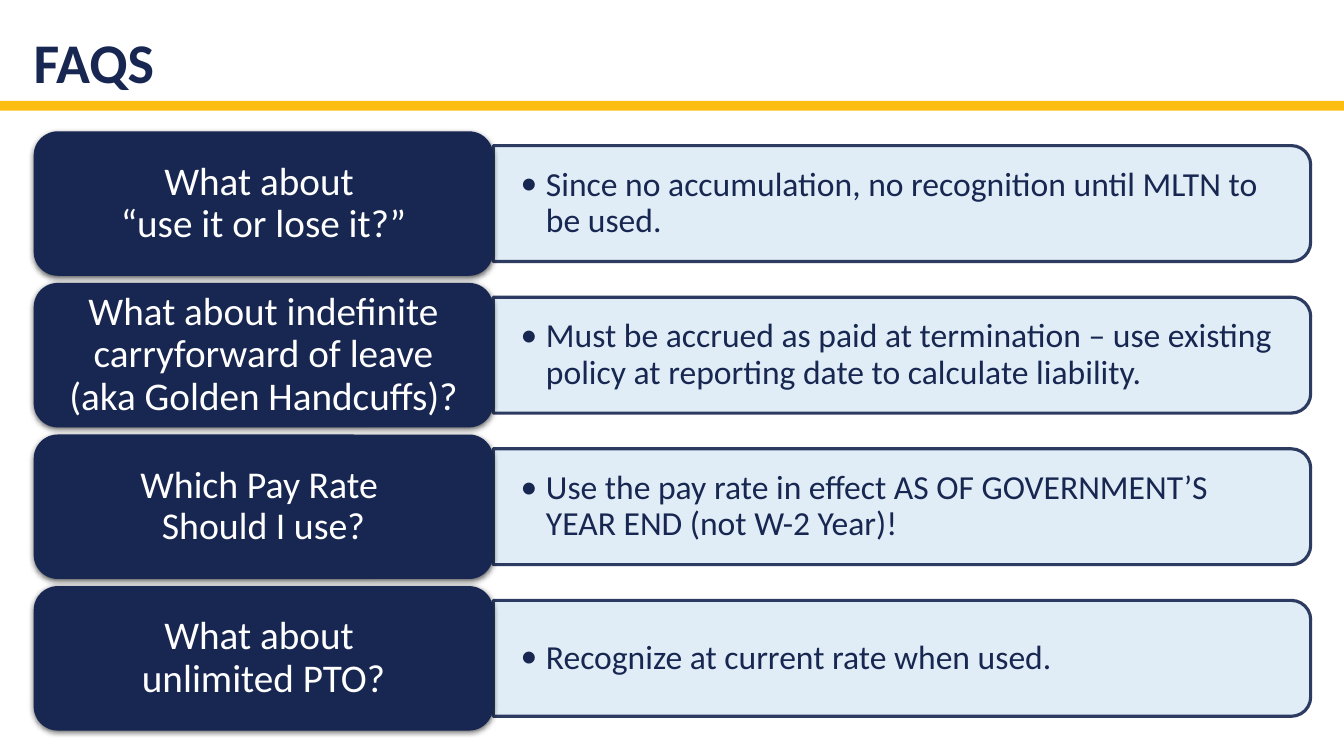
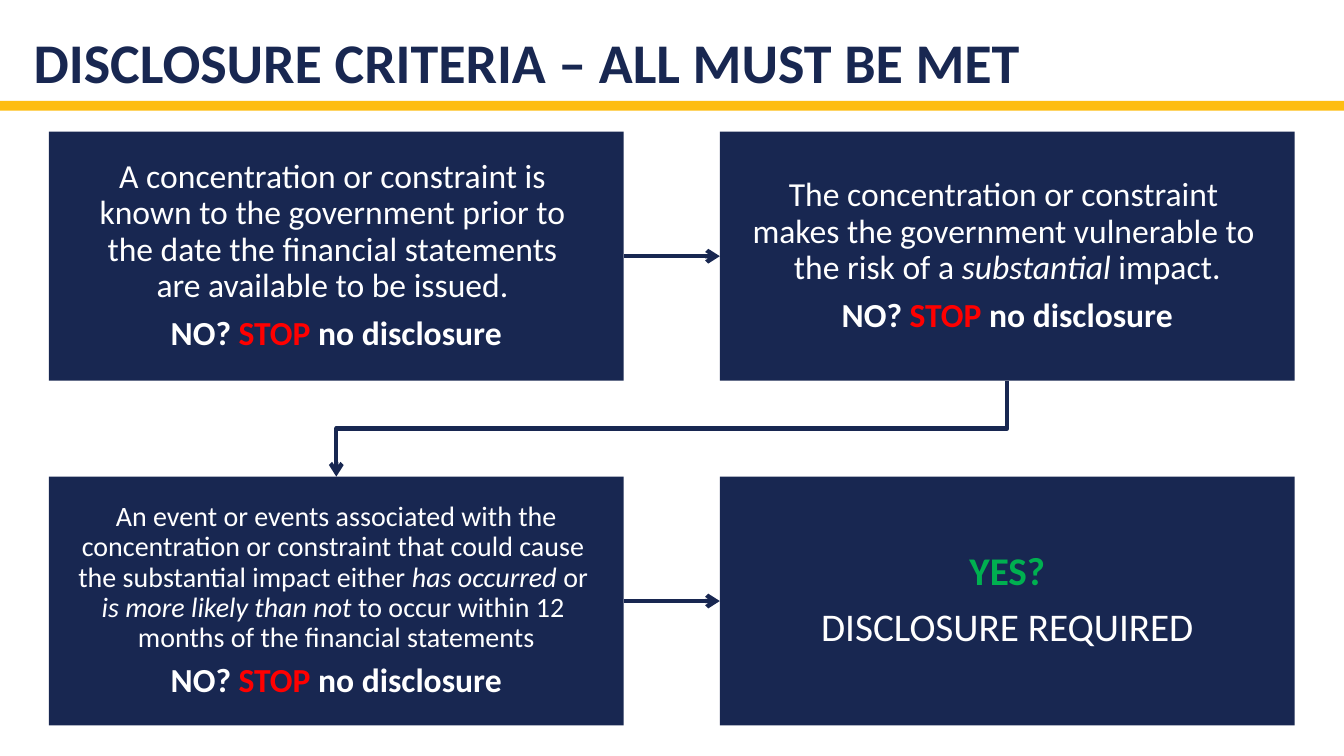
from lxml.etree import SubElement
from pptx import Presentation
from pptx.dml.color import RGBColor
from pptx.enum.shapes import MSO_CONNECTOR, MSO_SHAPE
from pptx.enum.text import MSO_ANCHOR, PP_ALIGN
from pptx.oxml.ns import qn
from pptx.util import Cm, Pt

COLOURS = {
    "navy": "182751",
    "gold": "FEBD11",
    "pale": "DDECF6",
    "white": "FFFFFF",
    "red": "FF0000",
    "green": "00B050",
}
PALETTE = {name: RGBColor.from_string(value) for name, value in COLOURS.items()}
FONT = "Calibri"

deck = Presentation()
deck.slide_width = Cm(33.87)
deck.slide_height = Cm(19.05)


def fill_paragraph(paragraph, spans, size, colour, bold=False, align=PP_ALIGN.CENTER):
    paragraph.alignment = align
    paragraph.line_spacing = 0.9
    paragraph.font.name = FONT
    paragraph.font.size = Pt(size)
    paragraph.font.bold = bold
    paragraph.font.color.rgb = PALETTE[colour]
    for text, style in spans:
        for index, line in enumerate(text.split("\n")):
            if index:
                paragraph.add_line_break()
            if line:
                span = paragraph.add_run()
                span.text = line
                if style == "italic":
                    span.font.italic = True
                elif style:
                    span.font.color.rgb = PALETTE[style]


def add_box(page, shape_type, left, top, width, height, colour, margins=(0, 0)):
    box = page.shapes.add_shape(shape_type, Cm(left), Cm(top), Cm(width), Cm(height))
    box.shadow.inherit = False
    box.fill.solid()
    box.fill.fore_color.rgb = PALETTE[colour]
    box.line.fill.background()
    frame = box.text_frame
    frame.word_wrap = True
    frame.vertical_anchor = MSO_ANCHOR.MIDDLE
    frame.margin_left = frame.margin_right = Cm(margins[0])
    frame.margin_top = frame.margin_bottom = Cm(margins[1])
    return box


pages = []
for title in ["FAQS", "DISCLOSURE CRITERIA – ALL MUST BE MET"]:
    page = deck.slides.add_slide(deck.slide_layouts[6])
    add_box(page, MSO_SHAPE.RECTANGLE, 0, 2.54, 33.87, 0.25, "gold")
    heading = page.shapes.add_textbox(Cm(0.85), 0, Cm(32.18), Cm(2.54)).text_frame
    heading.word_wrap = True
    heading.vertical_anchor = MSO_ANCHOR.BOTTOM
    heading.margin_left = heading.margin_right = 0
    fill_paragraph(heading.paragraphs[0], [(title, "")], 40, "navy", True, PP_ALIGN.LEFT)
    pages.append(page)
faq_page, criteria_page = pages

FAQS = [
    ("What about \n“use it or lose it?”", 28,
     "Since no accumulation, no recognition until MLTN to be used."),
    ("What about indefinite carryforward of leave (aka Golden Handcuffs)?", 28,
     "Must be accrued as paid at termination – use existing policy at reporting date "
     "to calculate liability."),
    ("Which Pay Rate \nShould I use?", 27,
     "Use the pay rate in effect AS OF GOVERNMENT’S YEAR END (not W-2 Year)!"),
    ("What about \nunlimited PTO?", 28, "Recognize at current rate when used."),
]
ROW_TOP, ROW_PITCH = 3.31, 3.82
QUESTION_LEFT, QUESTION_WIDTH, QUESTION_HEIGHT = 0.85, 11.58, 3.64
ANSWER_LEFT = QUESTION_LEFT + QUESTION_WIDTH
ANSWER_WIDTH, ANSWER_HEIGHT = 20.6, 2.92

for row, (question, size, answer) in enumerate(FAQS):
    top = ROW_TOP + row * ROW_PITCH
    middle = top + QUESTION_HEIGHT / 2
    panel = add_box(
        faq_page, MSO_SHAPE.ROUND_2_SAME_RECTANGLE,
        ANSWER_LEFT + (ANSWER_WIDTH - ANSWER_HEIGHT) / 2, middle - ANSWER_WIDTH / 2,
        ANSWER_HEIGHT, ANSWER_WIDTH, "pale")
    panel.rotation = 90
    panel.line.width = Pt(2.25)
    panel.line.color.rgb = PALETTE["navy"]
    for colour in panel.element.spPr.iter(qn("a:srgbClr")):
        SubElement(colour, qn("a:alpha"), val="90000")

    frame = faq_page.shapes.add_textbox(
        Cm(ANSWER_LEFT), Cm(middle - ANSWER_HEIGHT / 2), Cm(20.45), Cm(ANSWER_HEIGHT)).text_frame
    frame.word_wrap = True
    frame.vertical_anchor = MSO_ANCHOR.MIDDLE
    frame.margin_left = frame.margin_right = Cm(0.69)
    paragraph = frame.paragraphs[0]
    properties = paragraph._p.get_or_add_pPr()
    properties.set("marL", str(Cm(0.64)))
    properties.set("indent", str(-Cm(0.64)))
    SubElement(properties, qn("a:buFont"), typeface=FONT)
    SubElement(properties, qn("a:buChar"), char="•")
    fill_paragraph(paragraph, [(answer, "")], 24, "navy", align=PP_ALIGN.LEFT)

    label = add_box(faq_page, MSO_SHAPE.ROUNDED_RECTANGLE, QUESTION_LEFT, top,
                    QUESTION_WIDTH, QUESTION_HEIGHT, "navy", (0.48, 0.3))
    fill_paragraph(label.text_frame.paragraphs[0], [(question, "")], size, "white")
    shadow = SubElement(
        label.element.spPr.find(qn("a:effectLst")), qn("a:outerShdw"),
        blurRad=str(Pt(4.5)), dist=str(Pt(1.5)), dir="5400000", algn="ctr", rotWithShape="0")
    shadow_colour = SubElement(shadow, qn("a:srgbClr"), val="000000")
    SubElement(shadow_colour, qn("a:alpha"), val="63000")

STOP = ([("NO? ", ""), ("STOP", "red"), (" no disclosure", "")], 24, "white", True)
CRITERIA = [
    [([("A concentration or constraint is \nknown to the government prior to \n"
        "the date the financial statements \nare available to be issued. ", "")],
      24, "white", False), STOP],
    [([("The concentration or constraint \nmakes the government vulnerable to \n"
        "the risk of a ", ""), ("substantial ", "italic"), ("impact.", "")],
      24, "white", False), STOP],
    [([("An event or events associated with the concentration or constraint that could cause \n"
        "the substantial impact either ", ""), ("has occurred ", "italic"), ("or \n", ""),
       ("is more likely than not", "italic"),
       (" to occur within 12 \nmonths of the financial statements", "")],
      20, "white", False), STOP],
    [([("YES?", "")], 28, "green", True),
     ([("DISCLOSURE REQUIRED", "")], 28, "white", False)],
]
STEP_LEFT, STEP_TOP, STEP_WIDTH, STEP_HEIGHT = 1.23, 3.32, 14.49, 6.27
COLUMN_PITCH, STEP_PITCH = 16.91, 8.69

steps = []
for index, paragraphs in enumerate(CRITERIA):
    row, column = divmod(index, 2)
    step = add_box(
        criteria_page, MSO_SHAPE.RECTANGLE, STEP_LEFT + column * COLUMN_PITCH,
        STEP_TOP + row * STEP_PITCH, STEP_WIDTH, STEP_HEIGHT, "navy", (0.5, 0.53))
    frame = step.text_frame
    for position, (spans, size, colour, bold) in enumerate(paragraphs):
        paragraph = frame.add_paragraph() if position else frame.paragraphs[0]
        fill_paragraph(paragraph, spans, size, colour, bold)
        paragraph.space_after = Pt(round(size * 0.35, 1))
    steps.append(step)

arrows = []
for start, end in [(steps[0], steps[1]), (steps[2], steps[3])]:
    arrow = criteria_page.shapes.add_connector(MSO_CONNECTOR.STRAIGHT, 0, 0, 0, 0)
    arrow.begin_connect(start, 3)
    arrow.end_connect(end, 1)
    arrows.append(arrow)

drop = STEP_PITCH - STEP_HEIGHT
center_x = STEP_LEFT + (STEP_WIDTH + COLUMN_PITCH) / 2
center_y = STEP_TOP + STEP_HEIGHT + drop / 2
elbow = criteria_page.shapes.add_connector(
    MSO_CONNECTOR.ELBOW, Cm(center_x - drop / 2), Cm(center_y - COLUMN_PITCH / 2),
    Cm(center_x + drop / 2), Cm(center_y + COLUMN_PITCH / 2))
elbow.element.spPr.find(qn("a:xfrm")).set("rot", "5400000")
arrows.append(elbow)

for arrow in arrows:
    arrow.line.width = Pt(3)
    arrow.line.color.rgb = PALETTE["navy"]
    properties = arrow.element.spPr
    SubElement(properties.find(qn("a:ln")), qn("a:tailEnd"), type="arrow")
    SubElement(properties, qn("a:effectLst"))

deck.save("out.pptx")
